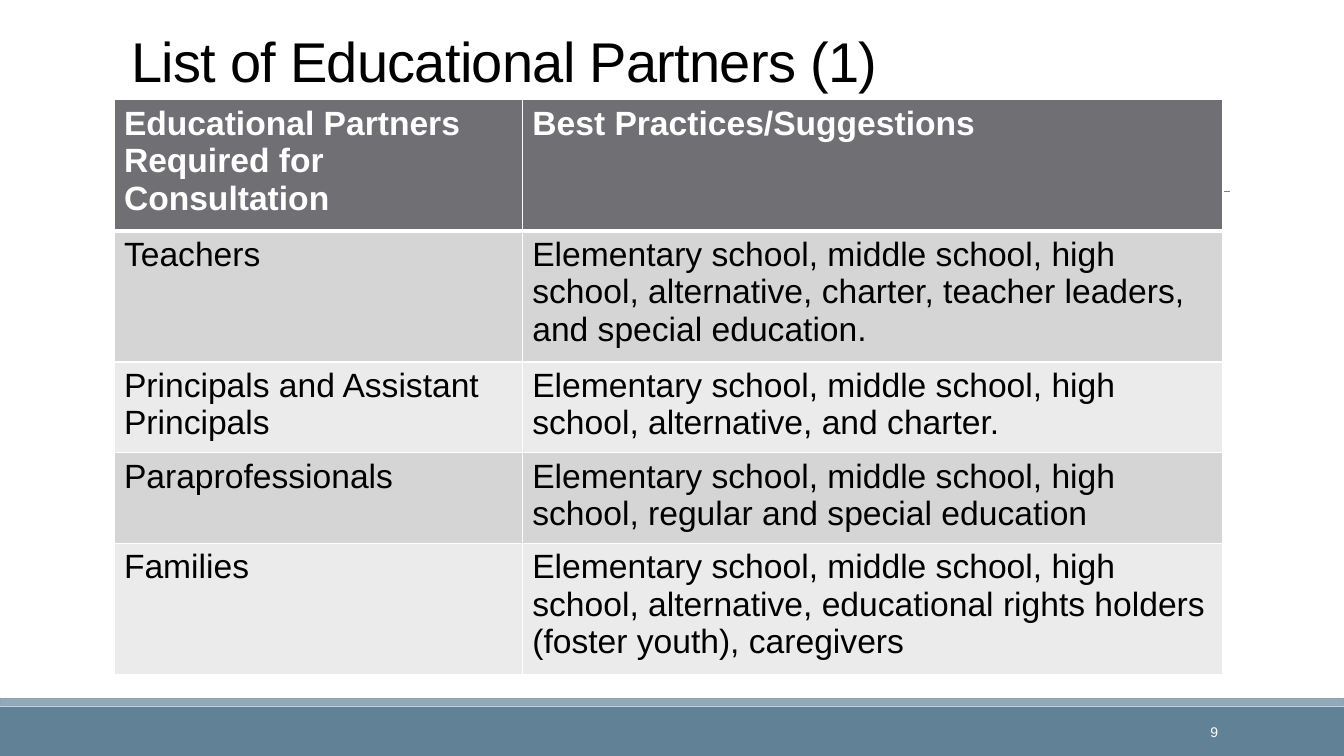
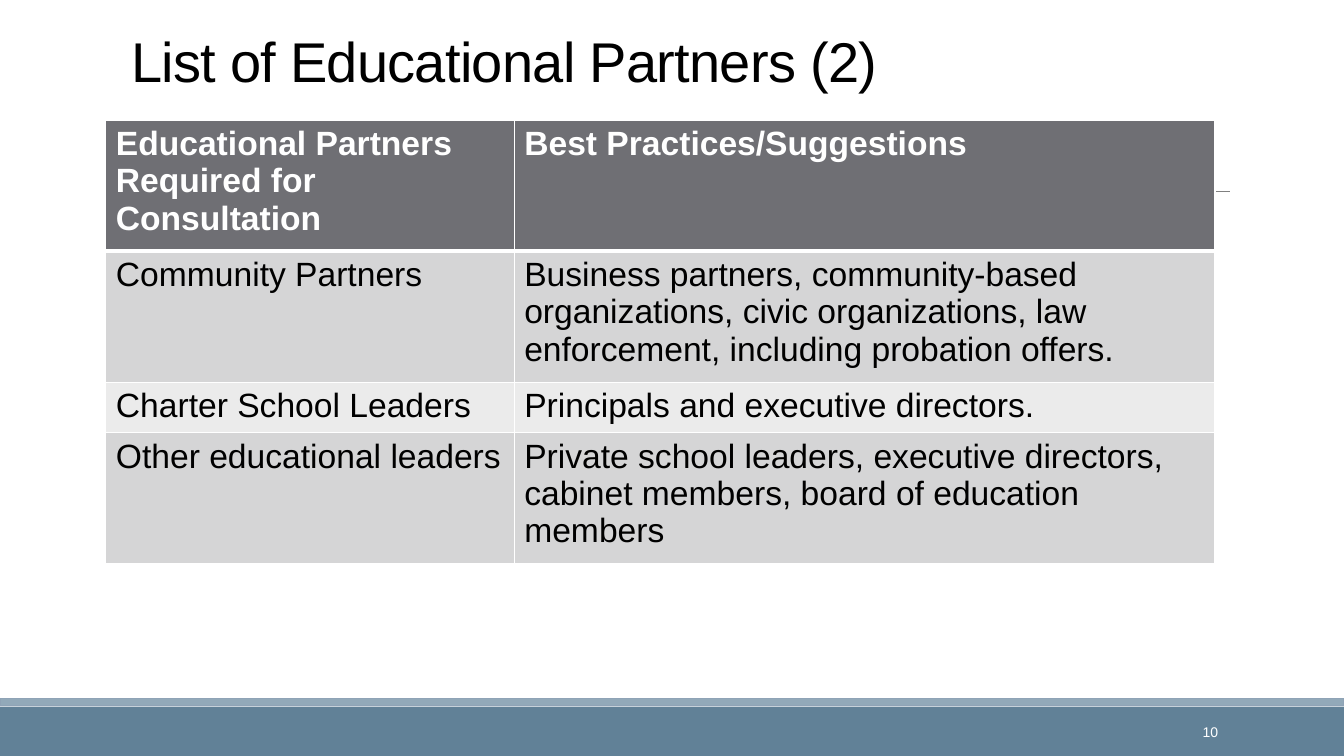
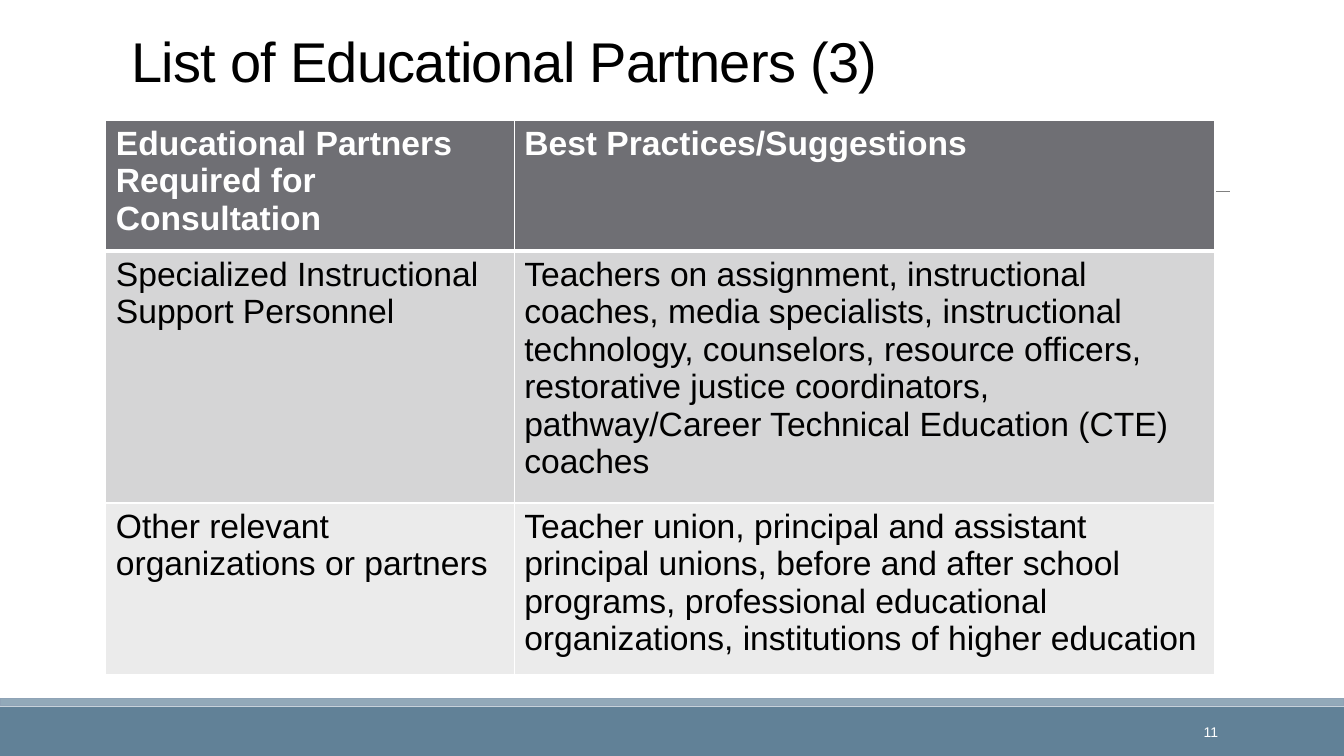
from lxml.etree import SubElement
from pptx import Presentation
from pptx.dml.color import RGBColor
from pptx.enum.shapes import MSO_CONNECTOR as Connector, MSO_SHAPE as Shape
from pptx.enum.text import MSO_ANCHOR as Anchor, MSO_AUTO_SIZE as AutoSize, PP_ALIGN as Align
from pptx.oxml.ns import qn
from pptx.util import Inches, Pt

# Content
HEADERS = ("Educational Partners Required for Consultation", "Best Practices/Suggestions")
FIRST_PAGE = 9
PAGES = [
    {"table_at": (1.13, 0.99), "rows": [
        ("Teachers", "Elementary school, middle school, high school, alternative, "
                     "charter, teacher leaders, and special education."),
        ("Principals and Assistant Principals",
         "Elementary school, middle school, high school, alternative, and charter."),
        ("Paraprofessionals",
         "Elementary school, middle school, high school, regular and special education"),
        ("Families", "Elementary school, middle school, high school, alternative, "
                     "educational rights holders (foster youth), caregivers"),
    ]},
    {"table_at": (1.05, 1.19), "rows": [
        ("Community Partners", "Business partners, community-based organizations, civic "
                               "organizations, law enforcement, including probation offers."),
        ("Charter School Leaders", "Principals and executive directors."),
        ("Other educational leaders", "Private school leaders, executive directors, "
                                      "cabinet members, board of education members"),
    ]},
    {"table_at": (1.05, 1.19), "rows": [
        ("Specialized Instructional Support Personnel",
         "Teachers on assignment, instructional coaches, media specialists, instructional "
         "technology, counselors, resource officers, restorative justice coordinators, "
         "pathway/Career Technical Education (CTE) coaches"),
        ("Other relevant organizations or partners",
         "Teacher union, principal and assistant principal unions, before and after school "
         "programs, professional educational organizations, institutions of higher education"),
    ]},
]

# Shared style
FONT = "Arial"
WHITE = RGBColor(0xFF, 0xFF, 0xFF)
BLACK = RGBColor(0x00, 0x00, 0x00)
BAND = RGBColor(0x61, 0x81, 0x97)
STRIPE = RGBColor(0x92, 0xA9, 0xB9)
STRIPE_EDGE = RGBColor(0x8F, 0xA3, 0xB6)
RULE = RGBColor(0x80, 0x80, 0x80)
HEADER_FILL = RGBColor(0x6F, 0x6F, 0x74)
ROW_FILLS = (RGBColor(0xD5, 0xD5, 0xD6), RGBColor(0xEB, 0xEB, 0xEB))
WIDTH, HEIGHT = 13.33, 7.5
BAND_TOP, STRIPE_TOP = 7.01, 6.93
COLUMNS = (4.05, 6.95)
ROW_HEIGHT = 0.46  # one line of text; rows grow with their content


def write(frame, text, size, color, bold=False, align=Align.LEFT, spacing=None, tracking=None):
    """Put one formatted paragraph in a text frame."""
    frame.word_wrap = True
    para = frame.paragraphs[0]
    para.alignment = align
    if spacing:
        para.line_spacing = spacing
    span = para.add_run()
    span.text = text
    font = span.font
    font.name, font.size, font.bold = FONT, Pt(size), bold
    font.color.rgb = color
    if tracking:
        font._element.set("spc", str(int(tracking * 100)))


def add_band(page, top, height, fill, edge=None):
    band = page.shapes.add_shape(Shape.RECTANGLE, 0, Inches(top), Inches(WIDTH), Inches(height))
    band.shadow.inherit = False
    band.fill.solid()
    band.fill.fore_color.rgb = fill
    if edge:
        band.line.color.rgb = edge
        band.line.width = Pt(1.25)
    else:
        band.line.fill.background()


def add_frame(page, number):
    """Draw the bands, the rule and the page number."""
    add_band(page, BAND_TOP, HEIGHT - BAND_TOP, BAND)
    add_band(page, STRIPE_TOP, 0.07, STRIPE, STRIPE_EDGE)
    rule = page.shapes.add_connector(
        Connector.STRAIGHT, Inches(1.31), Inches(1.9), Inches(12.2), Inches(1.9))
    rule.line.color.rgb = RULE
    rule.line.width = Pt(0.5)
    SubElement(rule._element.spPr, qn("a:effectLst"))
    box = page.shapes.add_textbox(Inches(10.74), Inches(7.06), Inches(1.44), Inches(0.4))
    box.text_frame.vertical_anchor = Anchor.MIDDLE
    write(box.text_frame, str(number), size=10, color=WHITE, align=Align.RIGHT)


def add_title(page, text):
    title = page.shapes.title
    title.left, title.top = Inches(1.2), Inches(0.31)
    title.width, title.height = Inches(11), Inches(0.67)
    frame = title.text_frame
    frame.auto_size = AutoSize.NONE
    frame.vertical_anchor = Anchor.BOTTOM
    write(frame, text, size=40, color=BLACK, spacing=0.85, tracking=-0.5)


def set_borders(cell, **widths):
    properties = cell._tc.get_or_add_tcPr()
    for side, width in widths.items():
        line = SubElement(properties, qn(f"a:ln{side}"), w=str(Pt(width)))
        fill = SubElement(line, qn("a:solidFill"))
        SubElement(fill, qn("a:srgbClr"), val=str(WHITE))


def add_partner_table(page, left, top, rows):
    rows = [HEADERS, *rows]
    table = page.shapes.add_table(
        len(rows), len(COLUMNS), Inches(left), Inches(top),
        Inches(sum(COLUMNS)), Inches(ROW_HEIGHT * len(rows))).table
    table.horz_banding = False
    for column, width in zip(table.columns, COLUMNS):
        column.width = Inches(width)
    for i, texts in enumerate(rows):
        header = i == 0
        for cell, text in zip(table.rows[i].cells, texts):
            set_borders(cell, L=1, R=1, T=3 if i == 1 else 1, B=3 if header else 1)
            cell.fill.solid()
            cell.fill.fore_color.rgb = HEADER_FILL if header else ROW_FILLS[(i - 1) % 2]
            write(cell.text_frame, text, size=24, color=WHITE if header else BLACK, bold=header)


def main():
    deck = Presentation()
    deck.slide_width, deck.slide_height = Inches(WIDTH), Inches(HEIGHT)
    title_only = deck.slide_layouts[5]
    for i, content in enumerate(PAGES):
        page = deck.slides.add_slide(title_only)
        add_frame(page, FIRST_PAGE + i)
        add_title(page, f"List of Educational Partners ({i + 1})")
        add_partner_table(page, *content["table_at"], content["rows"])
    deck.save("out.pptx")


if __name__ == "__main__":
    main()
